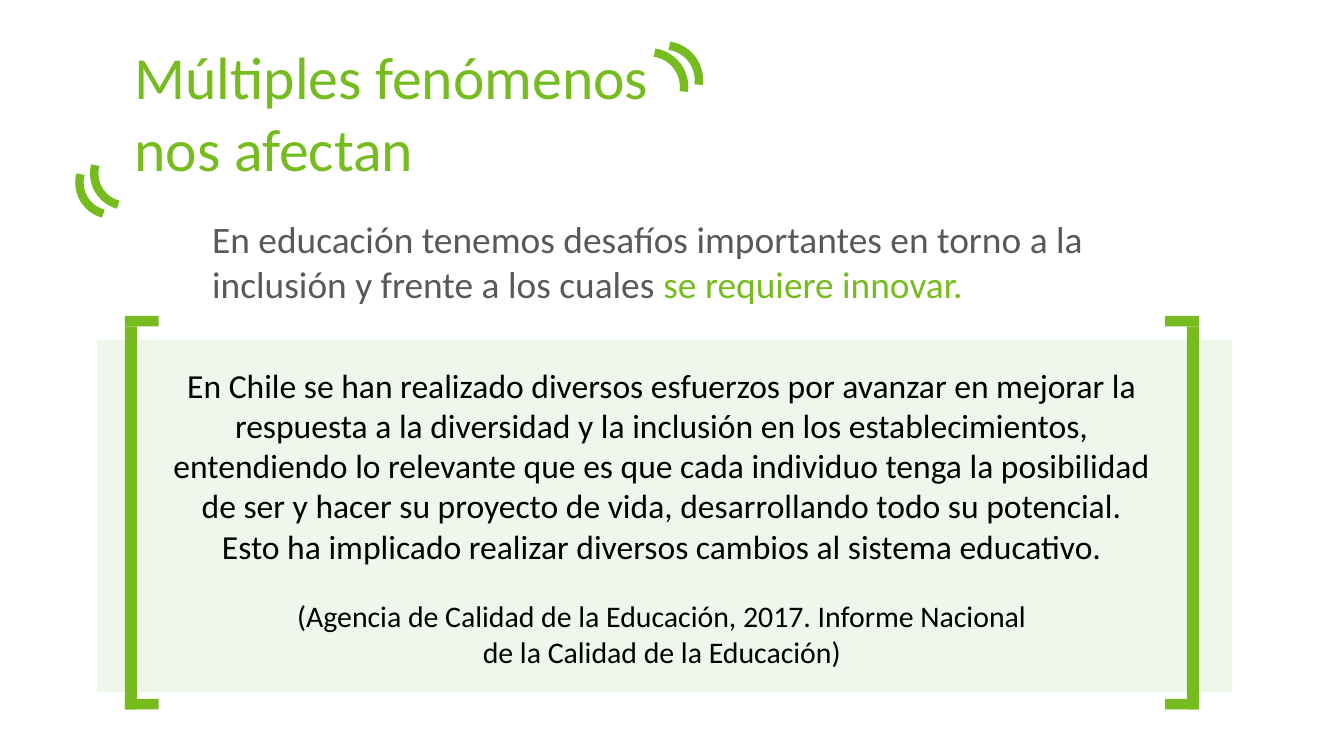
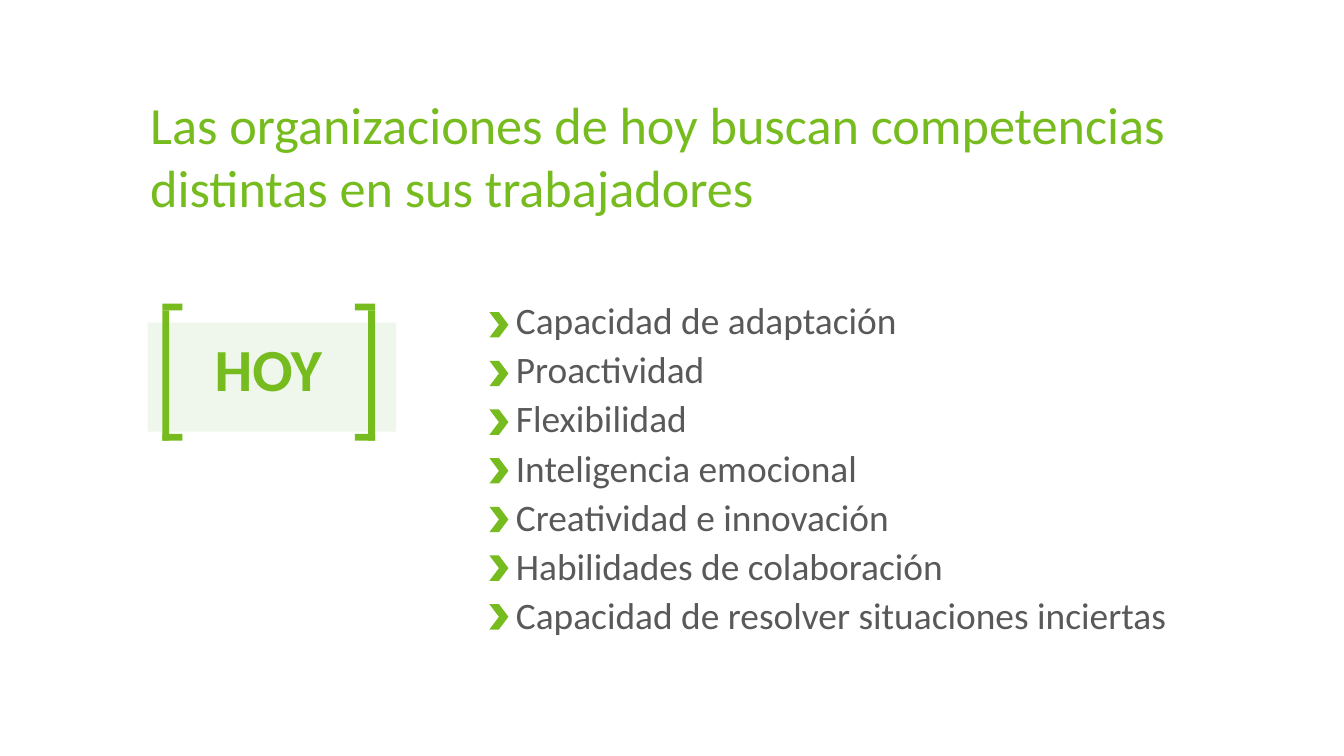
from pptx import Presentation
from pptx.dml.color import RGBColor
from pptx.enum.shapes import MSO_SHAPE as Shape
from pptx.enum.text import MSO_ANCHOR as Anchor, PP_ALIGN as Align
from pptx.util import Cm, Pt

COLORS = {"green": "77BC1F", "pale": "EFF6EC", "gray": "595959",
          "black": "000000", "white": "FFFFFF"}
FONT = "Calibri"

CHALLENGES = {
    "title": "Múltiples fenómenos nos afectan",
    "intro": [("En educación tenemos desafíos importantes en torno a la "
               "inclusión y frente a los cuales ", "gray"),
              ("se requiere innovar.", "green")],
    "quote": "En Chile se han realizado diversos esfuerzos por avanzar en "
             "mejorar la respuesta a la diversidad y la inclusión en los "
             "establecimientos, entendiendo lo relevante que es que cada "
             "individuo tenga la posibilidad de ser y hacer su proyecto de "
             "vida, desarrollando todo su potencial. Esto ha implicado "
             "realizar diversos cambios al sistema educativo.",
    "citation": ["(Agencia de Calidad de la Educación, 2017. Informe Nacional",
                 "de la Calidad de la Educación)"],
}
COMPETENCES = {
    "title": "Las organizaciones de hoy buscan competencias distintas en sus "
             "trabajadores",
    "label": "HOY",
    "skills": ["Capacidad de adaptación", "Proactividad", "Flexibilidad",
               "Inteligencia emocional", "Creatividad e innovación",
               "Habilidades de colaboración",
               "Capacidad de resolver situaciones inciertas"],
}
TITLE_ARCS = [
    (11.63, 0.99, 1.3, 8.1), (11.91, 0.86, 1.3, 8.1),
    (1.5, 2.84, 1.22, 195), (1.78, 2.67, 1.22, 195),
]
CHEVRON_TOP, CHEVRON_STEP = 5.9, 0.92


def rgb(name):
    return RGBColor.from_string(COLORS[name])


def add_slide(presentation):
    slide = presentation.slides.add_slide(presentation.slide_layouts[6])
    slide.background.fill.solid()
    slide.background.fill.fore_color.rgb = rgb("white")
    return slide


def add_filled(slide, kind, box, color):
    shape = slide.shapes.add_shape(kind, *map(Cm, box))
    shape.shadow.inherit = False
    shape.fill.solid()
    shape.fill.fore_color.rgb = rgb(color)
    shape.line.fill.background()


def add_arc(slide, left, top, size, rotation):
    arc = slide.shapes.add_shape(Shape.ARC, *map(Cm, (left, top, size, size)))
    arc.shadow.inherit = False
    arc.fill.background()
    arc.line.color.rgb = rgb("green")
    arc.line.width = Pt(4.5)
    arc.rotation = rotation


def add_brackets(slide, left, right, top, bottom, tick, thickness, bar):
    for tick_left, bar_left in ((left, left), (right - tick, right - bar)):
        for tick_top in (top, bottom - thickness):
            add_filled(slide, Shape.RECTANGLE,
                       (tick_left, tick_top, tick, thickness), "green")
        add_filled(slide, Shape.RECTANGLE,
                   (bar_left, top + thickness, bar, bottom - top - thickness),
                   "green")


def add_text(slide, box, paragraphs, size, color, align=Align.LEFT,
             anchor=Anchor.TOP, inset=0.25, spacing=None, bold=False):
    frame = slide.shapes.add_textbox(*map(Cm, box)).text_frame
    frame.word_wrap = True
    frame.vertical_anchor = anchor
    frame.margin_left = frame.margin_right = Cm(0.25)
    frame.margin_top = frame.margin_bottom = Cm(inset)
    for index, text in enumerate(paragraphs):
        paragraph = frame.add_paragraph() if index else frame.paragraphs[0]
        paragraph.alignment = align
        paragraph.line_spacing = spacing
        paragraph.font.name = FONT
        paragraph.font.size = Pt(size)
        paragraph.font.bold = bold
        paragraph.font.color.rgb = rgb(color)
        runs = [(text, color)] if isinstance(text, str) else text
        for words, run_color in runs:
            run = paragraph.add_run()
            run.text = words
            if run_color != color:
                run.font.color.rgb = rgb(run_color)
    return frame


def add_title(slide, box, title, size):
    add_text(slide, box, [title], size, "green", anchor=Anchor.MIDDLE)


def build_challenges(presentation):
    slide = add_slide(presentation)
    add_title(slide, (2.29, -0.94, 10.36, 6.1), CHALLENGES["title"], 32)
    for arc in TITLE_ARCS:
        add_arc(slide, *arc)
    add_filled(slide, Shape.RECTANGLE, (1.83, 6.43, 21.46, 6.65), "pale")
    add_brackets(slide, 2.36, 22.66, 5.97, 13.41, 0.64, 0.2, 0.23)
    add_text(slide, (3.76, 3.96, 17.63, 2.82), [CHALLENGES["intro"]], 20,
             "gray", inset=0.13)
    quote = add_text(slide, (2.97, 6.76, 19.08, 6.07),
                     [CHALLENGES["quote"], *CHALLENGES["citation"]], 18,
                     "black", align=Align.CENTER, inset=0.13)
    citation = quote.paragraphs[1:]
    citation[0].space_before = Pt(17)
    for paragraph in citation:
        paragraph.font.size = Pt(16)


def build_competences(presentation):
    slide = add_slide(presentation)
    add_filled(slide, Shape.RECTANGLE, (2.79, 6.1, 4.7, 2.06), "pale")
    add_title(slide, (2.59, 1.52, 21.36, 2.82), COMPETENCES["title"], 28)
    add_text(slide, (9.5, 5.28, 13.59, 7.62), COMPETENCES["skills"], 20,
             "gray", spacing=1.1)
    add_brackets(slide, 3.07, 7.09, 5.74, 8.33, 0.38, 0.13, 0.13)
    label = add_text(slide, (3.66, 5.82, 2.82, 1.98), [COMPETENCES["label"]],
                     32, "green", align=Align.CENTER, spacing=1.15, bold=True)
    label.paragraphs[0].space_after = Pt(16)
    for index in range(len(COMPETENCES["skills"])):
        top = CHEVRON_TOP + index * CHEVRON_STEP
        add_filled(slide, Shape.CHEVRON, (9.25, top, 0.36, 0.48), "green")


def main():
    presentation = Presentation()
    presentation.slide_width = Cm(25.4)
    presentation.slide_height = Cm(14.29)
    build_challenges(presentation)
    build_competences(presentation)
    presentation.save("out.pptx")


if __name__ == "__main__":
    main()
